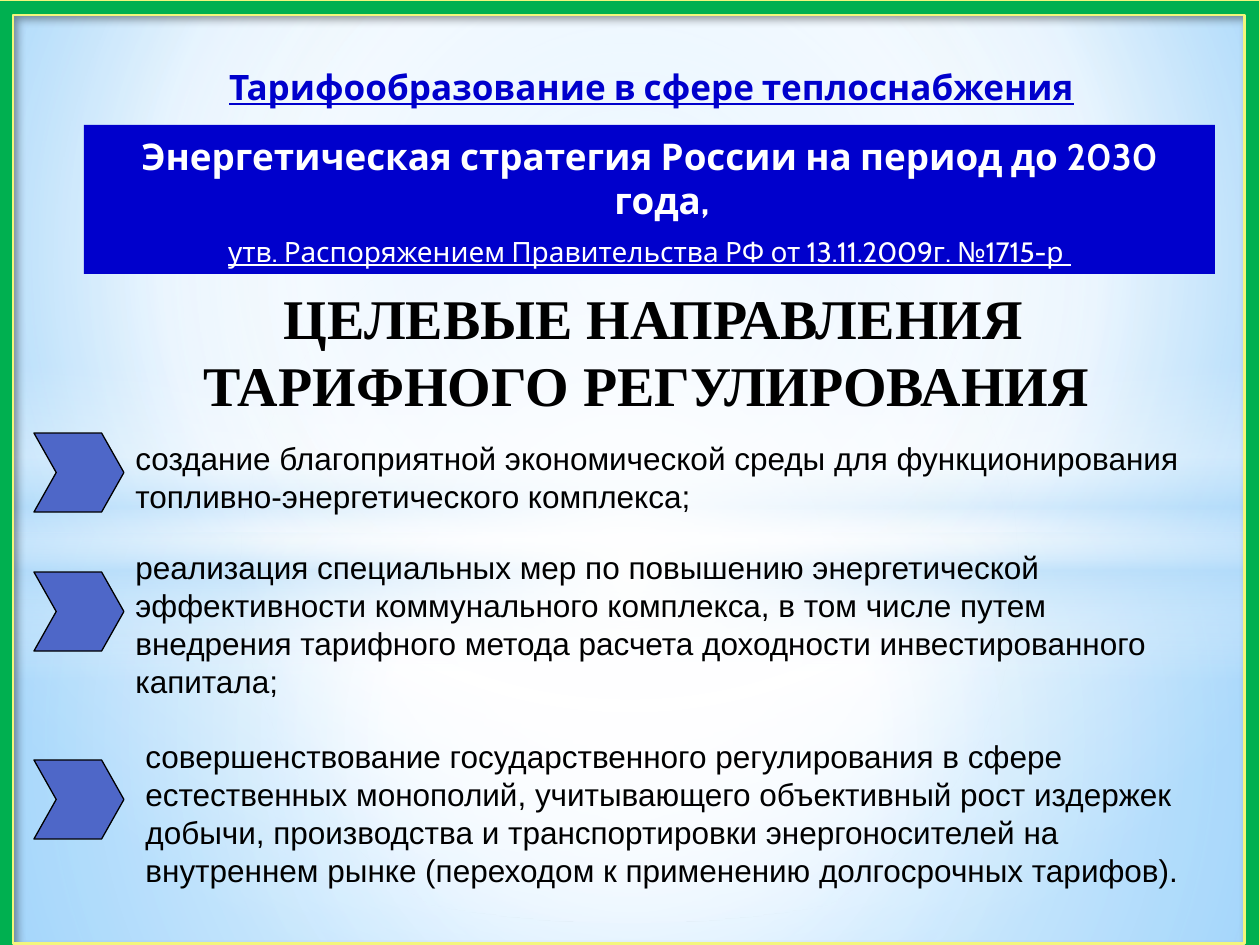
import pptx
import pptx.util
import pptx.dml.color
import pptx.enum.shapes
import pptx.enum.text
import pptx.oxml
import pptx.oxml.ns

PX = 914400 // 126
COLORS = {"green": "00B050", "yellow": "F3F67C", "navy": "0000CC", "white": "FFFFFF",
          "black": "000000", "violet": "4E67C8", "pale": "B4DCFA", "sky": "9ED5FF",
          "azure": "5BB9FF"}
RGB = {name: pptx.dml.color.RGBColor.from_string(c) for name, c in COLORS.items()}
NS = pptx.oxml.ns.nsdecls("a")
SHAPE = pptx.enum.shapes.MSO_SHAPE
ALIGN = pptx.enum.text.PP_ALIGN
ANCHOR = pptx.enum.text.MSO_ANCHOR


def set_gradient(fill, root, stops, focus=None):
    """Fill with (position, colour, opacity) stops: circular around focus (l, t, r, b), else top down."""
    fill.solid()
    gs = "".join(f'<a:gs pos="{pos * 1000}"><a:srgbClr val="{COLORS[c]}">'
                 f'<a:alpha val="{alpha * 1000}"/></a:srgbClr></a:gs>' for pos, c, alpha in stops)
    if focus:
        sides = " ".join(f'{k}="{v * 1000}"' for k, v in zip("ltrb", focus))
        way = f'<a:path path="circle"><a:fillToRect {sides}/></a:path>'
    else:
        way = '<a:lin ang="5400000" scaled="0"/>'
    solid = next(root.iter(pptx.oxml.ns.qn("a:solidFill")))
    solid.getparent().replace(solid, pptx.oxml.parse_xml(
        f'<a:gradFill {NS} rotWithShape="1"><a:gsLst>{gs}</a:gsLst>{way}</a:gradFill>'))


def write(sp, lines, anchor, align=ALIGN.LEFT, hang=0, before=0, after=0):
    """Put one paragraph per (text, font format) pair into the shape."""
    tf = sp.text_frame
    tf.word_wrap = True
    tf.vertical_anchor = anchor
    for i, (text, fmt) in enumerate(lines):
        p = tf.add_paragraph() if i else tf.paragraphs[0]
        p.alignment = align
        p.space_before, p.space_after = pptx.util.Pt(before), pptx.util.Pt(after)
        if hang:
            pPr = p._p.get_or_add_pPr()
            pPr.set("marL", str(hang * PX))
            pPr.set("indent", str(-hang * PX))
        r = p.add_run()
        r.text = text
        for key, value in fmt.items():
            if key == "color":
                r.font.color.rgb = RGB[value]
            else:
                setattr(r.font, key, pptx.util.Pt(value) if key == "size" else value)


prs = pptx.Presentation()
prs.slide_width, prs.slide_height = 1260 * PX, 945 * PX
s = prs.slides.add_slide(prs.slide_layouts[6])

# Background glow
set_gradient(s.background.fill, s._element,
             [(0, "sky", 100), (60, "white", 100), (100, "azure", 100)], (20, 10, 20, 60))
CENTER = (50, 50, 50, 50)
glows = [
    (SHAPE.RECTANGLE, (0, 533, 1260, 412),
     [(0, "white", 92), (37, "white", 77), (100, "pale", 80)], CENTER),
    (SHAPE.RECTANGLE, (0, 0, 1260, 533),
     [(0, "white", 90), (48, "white", 63), (100, "pale", 80)], CENTER),
    (SHAPE.RECTANGLE, (0, 365, 1260, 315),
     [(0, "white", 0), (29, "white", 30), (45, "pale", 40),
      (55, "white", 26), (65, "pale", 60), (100, "white", 0)], None),
    (SHAPE.OVAL, (0, 220, 1260, 703), [(0, "white", 100), (54, "white", 0)], CENTER),
]
for kind, box, stops, focus in glows:
    sp = s.shapes.add_shape(kind, *(v * PX for v in box))
    sp.shadow.inherit = False
    sp.line.fill.background()
    set_gradient(sp.fill, sp._element.spPr, stops, focus)

# Green frame
frame = s.shapes.add_shape(SHAPE.FRAME, -2 * PX, 0, 1262 * PX, 959 * PX)
frame.adjustments[0] = 0.016
frame.fill.solid()
frame.fill.fore_color.rgb = RGB["green"]
frame.line.color.rgb = RGB["yellow"]
frame.line.width = pptx.util.Pt(1.25)
frame._element.spPr.append(pptx.oxml.parse_xml(
    f'<a:effectLst {NS}><a:outerShdw blurRad="50800" dist="38100" dir="2700000">'
    f'<a:srgbClr val="{COLORS["black"]}"><a:alpha val="40000"/></a:srgbClr>'
    '</a:outerShdw></a:effectLst>'))

# Title, strategy banner and heading
title = s.shapes.add_textbox(203 * PX, 26 * PX, 897 * PX, 88 * PX)
write(title, [("Тарифообразование в сфере теплоснабжения",
               dict(size=20, name="Cabin", color="navy", bold=True, underline=True))],
      ANCHOR.BOTTOM, ALIGN.CENTER, hang=44)

banner = s.shapes.add_textbox(84 * PX, 125 * PX, 1131 * PX, 149 * PX)
banner.fill.solid()
banner.fill.fore_color.rgb = RGB["navy"]
write(banner, [("Энергетическая стратегия России на период до 2030 года,",
                dict(size=21, name="Cabin", color="white", bold=True)),
               ("утв. Распоряжением Правительства РФ от 13.11.2009г. №1715-р ",
                dict(size=16, name="Cabin", color="white", underline=True))],
      ANCHOR.BOTTOM, ALIGN.CENTER, hang=25, before=4, after=3)

heading = s.shapes.add_textbox(113 * PX, 277 * PX, 1081 * PX, 147 * PX)
write(heading, [("ЦЕЛЕВЫЕ НАПРАВЛЕНИЯ ТАРИФНОГО РЕГУЛИРОВАНИЯ ",
                 dict(size=32, name="Times New Roman", color="black", bold=True))],
      ANCHOR.MIDDLE, ALIGN.CENTER)

# Directions: text left, top, height, chevron top, text
directions = [
    (123, 433, 88, 433, "создание благоприятной экономической среды для функционирования "
     "топливно-энергетического комплекса;"),
    (123, 542, 164, 572, "реализация специальных мер по повышению энергетической эффективности "
     "коммунального комплекса, в том числе путем внедрения тарифного метода расчета доходности "
     "инвестированного капитала;"),
    (133, 731, 164, 760, "совершенствование государственного регулирования в сфере естественных "
     "монополий, учитывающего объективный рост издержек добычи, производства и транспортировки "
     "энергоносителей на внутреннем рынке (переходом к применению долгосрочных тарифов)."),
]
for left, top, height, chevron_top, text in directions:
    box = s.shapes.add_textbox(left * PX, top * PX, 1081 * PX, height * PX)
    write(box, [(text, dict(size=18, name="Arial", color="black"))], ANCHOR.TOP)
    chevron = s.shapes.add_shape(SHAPE.CHEVRON, 34 * PX, chevron_top * PX, 90 * PX, 79 * PX)
    chevron.adjustments[0] = 0.282
    chevron.shadow.inherit = False
    chevron.fill.solid()
    chevron.fill.fore_color.rgb = RGB["violet"]
    chevron.line.color.rgb = RGB["black"]
    chevron.line.width = pptx.util.Pt(0.75)

prs.save("out.pptx")
